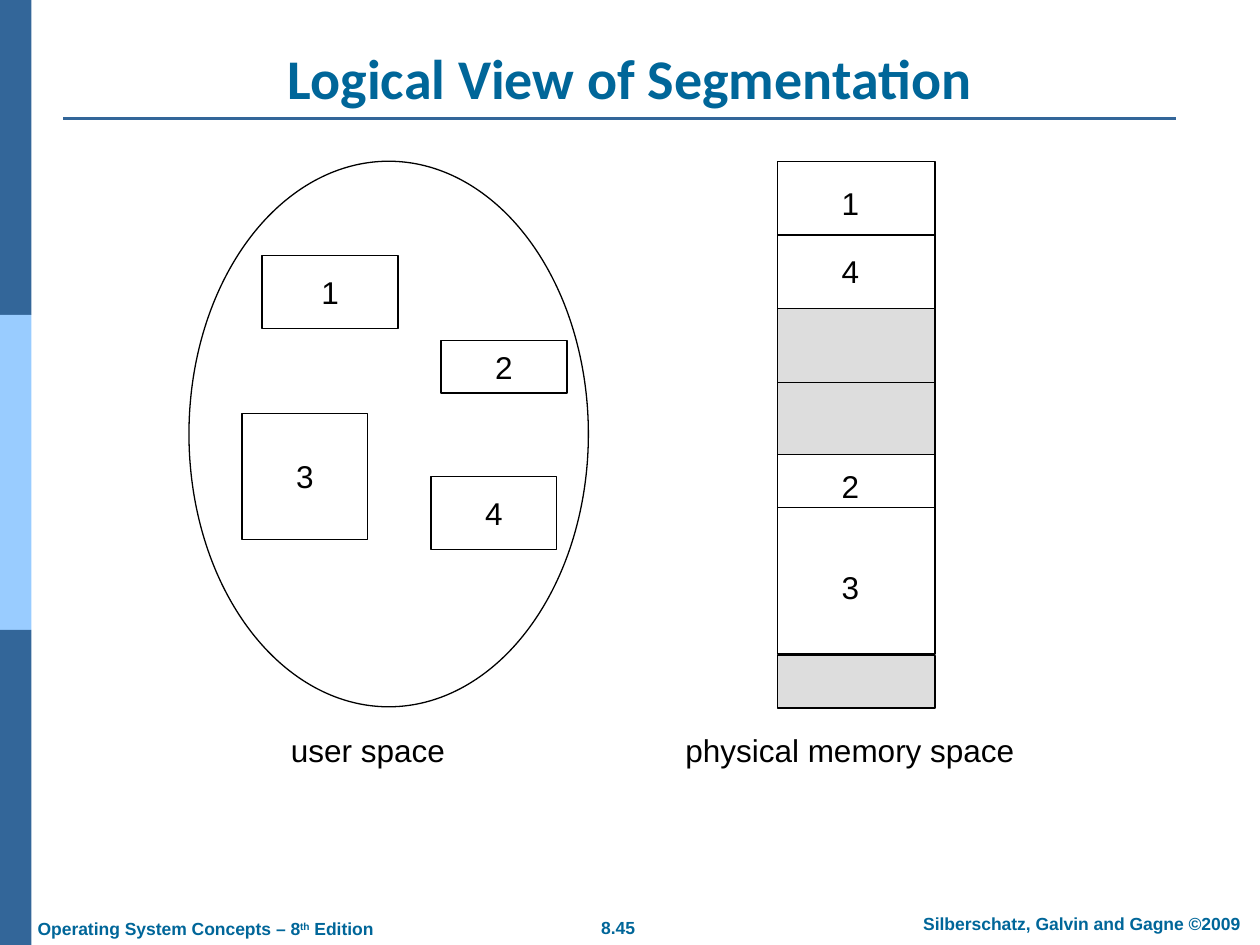
from lxml.etree import SubElement
from pptx import Presentation
from pptx.dml.color import RGBColor
from pptx.enum.shapes import MSO_CONNECTOR, MSO_SHAPE
from pptx.enum.text import MSO_ANCHOR, PP_ALIGN
from pptx.oxml.ns import qn
from pptx.util import Inches, Pt

COLORS = {"bar": "336699", "light": "99CCFF", "heading": "006699",
          "ink": "000000", "paper": "FFFFFF", "free": "DDDDDD"}
FORMATS = {
    "title": {"name": "Calibri", "size": Pt(32), "bold": True},
    "footer": {"name": "Arial", "size": Pt(10), "bold": True},
    "label": {"name": "Arial", "size": Pt(18), "bold": False},
}


class SegmentationSlide:
    """Draws styled elements on one slide."""

    def __init__(self, slide):
        self.slide = slide

    def color(self, key):
        return RGBColor.from_string(COLORS[key])

    def fill_text(self, frame, pieces, style, color, align=PP_ALIGN.CENTER,
                  anchor=MSO_ANCHOR.MIDDLE, wrap=False):
        for name, value in {"word_wrap": wrap, "vertical_anchor": anchor}.items():
            setattr(frame, name, value)
        paragraph = frame.paragraphs[0]
        paragraph.alignment = align
        for piece, baseline in pieces:
            run = paragraph.add_run()
            run.text = piece
            for name, value in FORMATS[style].items():
                setattr(run.font, name, value)
            run.font.color.rgb = self.color(color)
            if baseline:
                run.font._element.set("baseline", str(baseline))

    def title(self, text, box):
        heading = self.slide.shapes.title
        for name, value in zip(("left", "top", "width", "height"), box):
            setattr(heading, name, Inches(value))
        self.fill_text(heading.text_frame, [(text, 0)], "title", "heading",
                       anchor=MSO_ANCHOR.BOTTOM, wrap=True)

    def shape(self, box, fill, line="ink", text="", kind=MSO_SHAPE.RECTANGLE):
        block = self.slide.shapes.add_shape(kind, *map(Inches, box))
        block.shadow.inherit = False
        block.fill.solid()
        block.fill.fore_color.rgb = self.color(fill)
        if line:
            block.line.color.rgb = self.color(line)
            block.line.width = Pt(0.75)
        else:
            block.line.fill.background()
        if text:
            self.fill_text(block.text_frame, [(text, 0)], "label", "ink")
        return block

    def text(self, box, pieces, style="label", color="ink", **layout):
        caption = self.slide.shapes.add_textbox(*map(Inches, box))
        self.fill_text(caption.text_frame, pieces, style, color, **layout)

    def line(self, left, right, y, color="ink", width=0.75, across=None):
        rule = self.slide.shapes.add_connector(
            MSO_CONNECTOR.STRAIGHT, *map(Inches, (left, y, right, y)))
        rule.line.color.rgb = self.color(color)
        rule.line.width = Pt(width)
        SubElement(rule._element.spPr, qn("a:effectLst"))
        if across is not None:
            rule.begin_connect(across, 1)
            rule.end_connect(across, 3)


def draw_frame(page):
    for row, fill in enumerate(("bar", "light", "bar")):
        page.shape((0, 2.5 * row, 0.25, 2.5), fill, line=None)
    page.line(0.5, 9.33, 0.94, "bar", 1.5)
    page.title("Logical View of Segmentation", (0.5, 0.3, 9, 0.63))
    footer = {"style": "footer", "color": "heading", "anchor": MSO_ANCHOR.TOP}
    page.text((4.66, 7.23, 0.49, 0.27), [("8.45", 0)], **footer)
    page.text((7.1, 7.2, 2.97, 0.27),
              [("Silberschatz, Galvin and Gagne ©2009", 0)], wrap=True, **footer)
    page.text((0.2, 7.24, 2.88, 0.27),
              [("Operating System Concepts – 8", 0), ("th", 30000), (" Edition", 0)],
              align=PP_ALIGN.LEFT, **footer)


def draw_user_space(page):
    page.shape((1.5, 1.28, 3.17, 4.33), "paper", kind=MSO_SHAPE.OVAL)
    segments = {"1": (2.08, 2.03, 1.08, 0.58), "3": (1.92, 3.28, 1, 1),
                "2": (3.5, 2.7, 1, 0.42), "4": (3.42, 3.78, 1, 0.58)}
    for number, box in segments.items():
        page.shape(box, "paper", text=number)
    page.text((2.21, 5.75, 1.49, 0.4), [("user space ", 0)])


def draw_physical_memory(page):
    left, width = 6.17, 1.25
    right = left + width
    for top, height, fill, halved in ((1.28, 1.17, "paper", True),
                                      (2.45, 1.17, "free", True),
                                      (3.61, 1.58, "paper", False),
                                      (5.2, 0.42, "free", False)):
        region = page.shape((left, top, width, height), fill)
        if halved:
            page.line(left, right, top + height / 2, across=region)
    page.line(left, right, 4.03)
    for number, top in {"1": 1.41, "4": 1.95, "2": 3.66, "3": 4.46}.items():
        page.text((6.58, top, 0.34, 0.4), [(number, 0)])
    page.text((5.34, 5.75, 2.81, 0.4), [("physical memory space", 0)])


def main():
    deck = Presentation()
    deck.slide_width, deck.slide_height = Inches(10), Inches(7.5)
    page = SegmentationSlide(deck.slides.add_slide(deck.slide_layouts[5]))
    draw_frame(page)
    draw_user_space(page)
    draw_physical_memory(page)
    deck.save("out.pptx")


if __name__ == "__main__":
    main()
